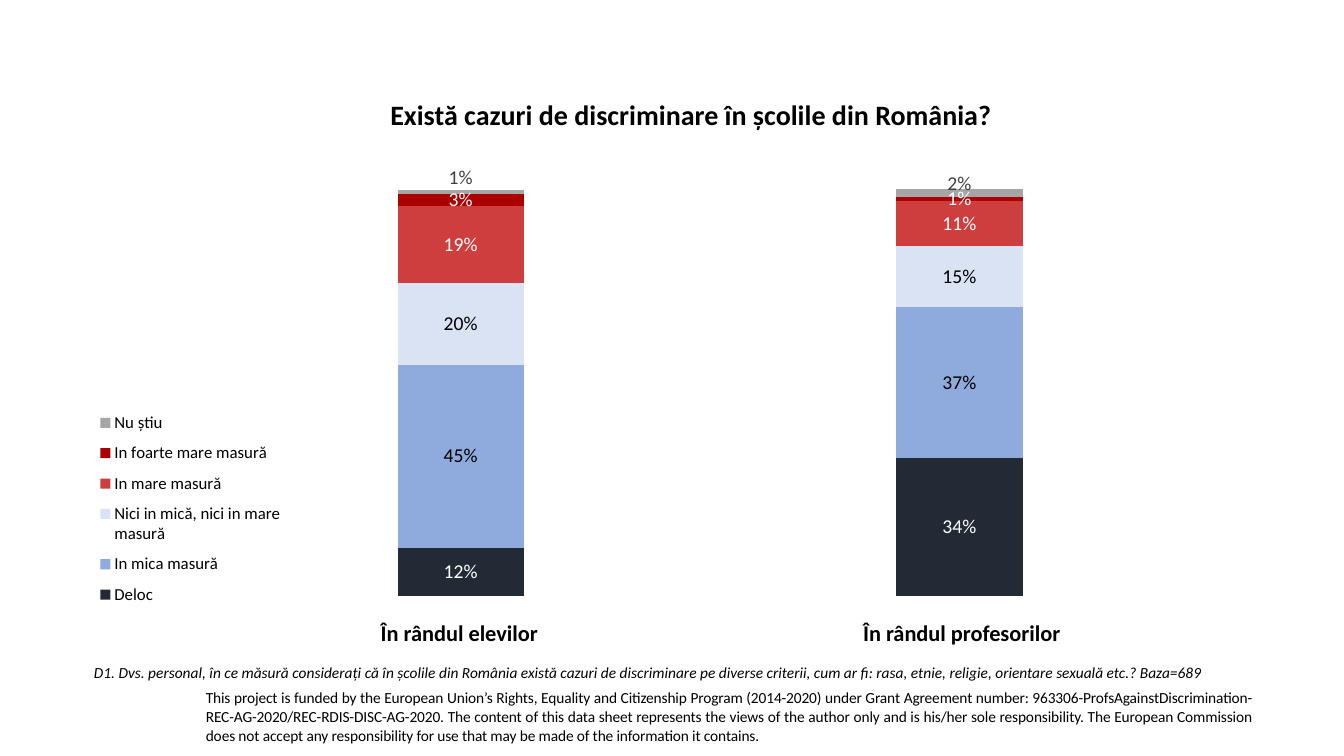
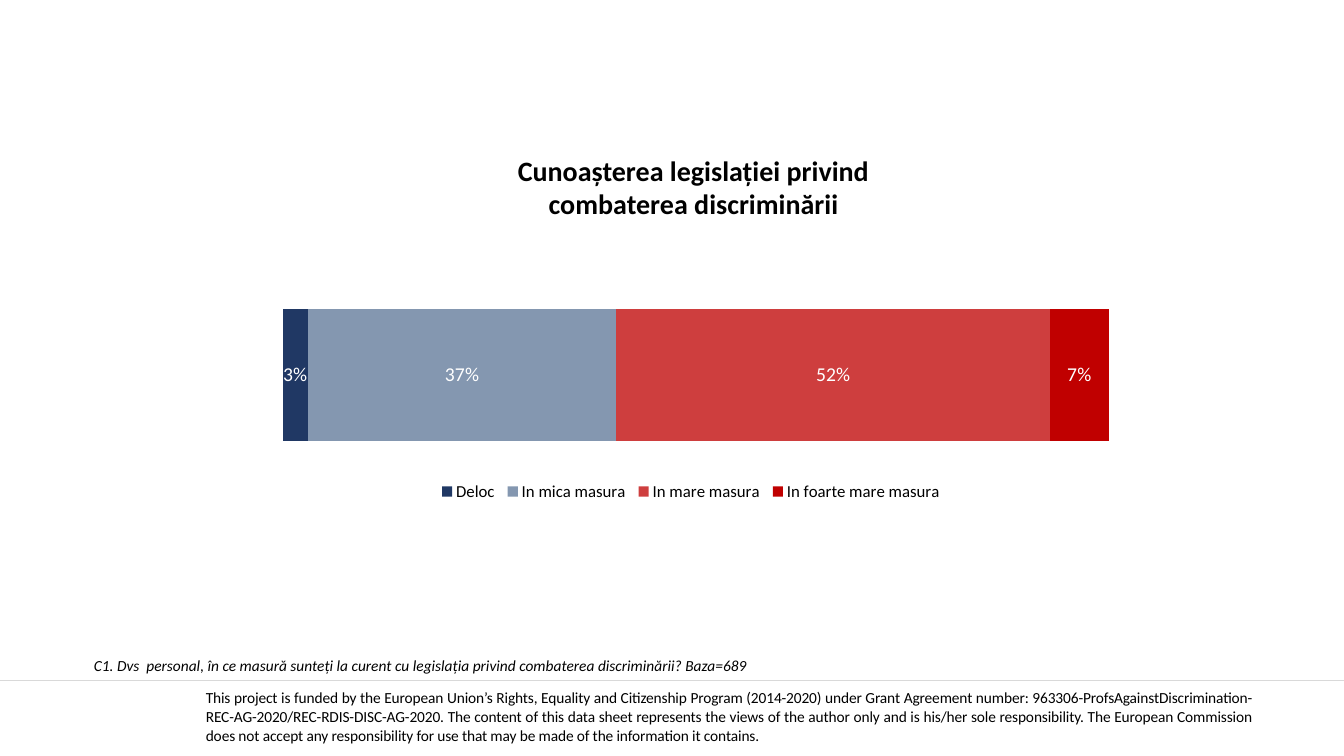
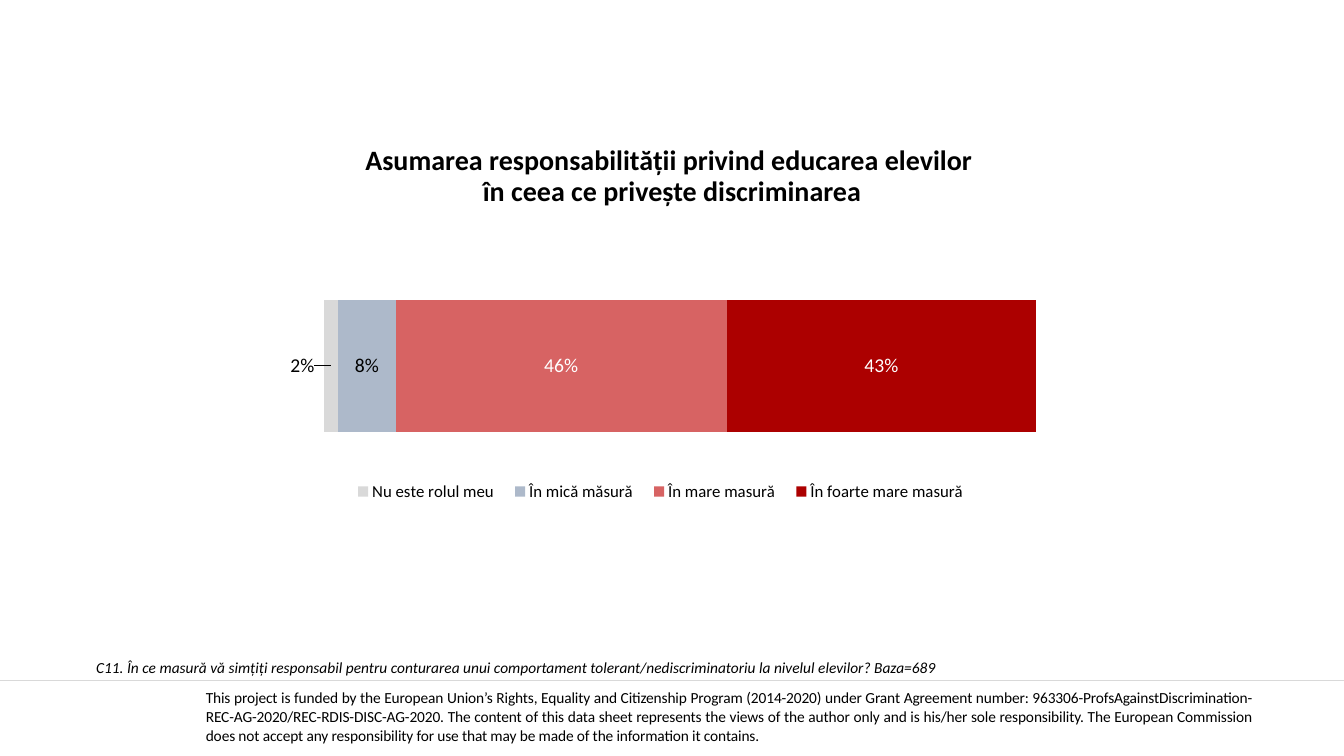
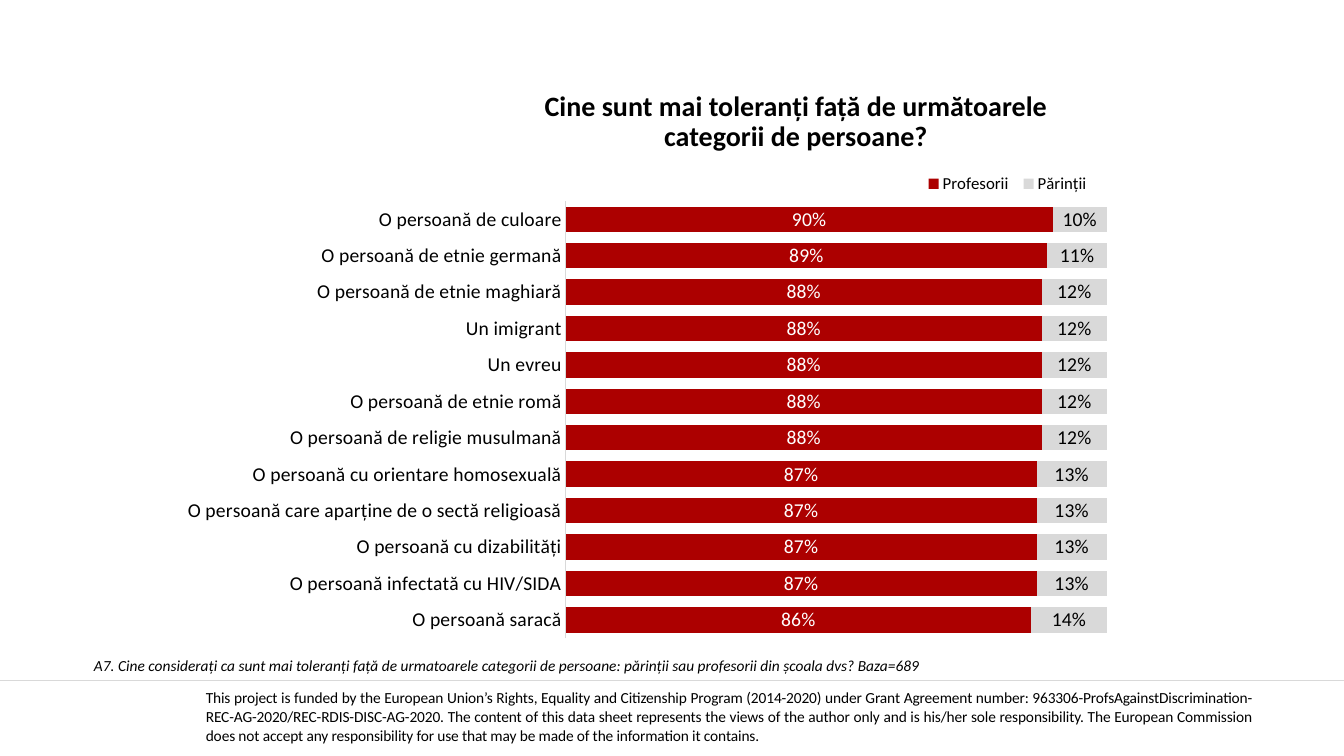
from lxml import etree
from pptx import Presentation
from pptx.chart.data import CategoryChartData
from pptx.dml.color import RGBColor
from pptx.enum.chart import (XL_CHART_TYPE, XL_LABEL_POSITION,
                             XL_LEGEND_POSITION, XL_TICK_MARK)
from pptx.enum.shapes import MSO_CONNECTOR
from pptx.enum.text import MSO_ANCHOR, PP_ALIGN
from pptx.oxml.ns import qn
from pptx.util import Emu, Pt

# Enum members
COLUMN = XL_CHART_TYPE.COLUMN_STACKED_100
BAR = XL_CHART_TYPE.BAR_STACKED
BAR_FULL = XL_CHART_TYPE.BAR_STACKED_100
CENTER, LEFT, JUSTIFY = PP_ALIGN.CENTER, PP_ALIGN.LEFT, PP_ALIGN.JUSTIFY
TOP, MIDDLE = MSO_ANCHOR.TOP, MSO_ANCHOR.MIDDLE
LEGEND_SIDE = {"left": XL_LEGEND_POSITION.LEFT,
               "bottom": XL_LEGEND_POSITION.BOTTOM,
               "top": XL_LEGEND_POSITION.TOP}

# Shared look
SCALE = 9525
WIDTH, HEIGHT = 1280, 720
BLACK, WHITE, DARK, GREY = "000000", "FFFFFF", "404040", "D9D9D9"
RED, CORAL = "AC0000", "CE3E3E"
PERCENT = "###0%"
PLAIN_TABLE = "{2D5ABB26-0587-4C30-8999-92F81FD0307C}"

TITLE = {"size": 20, "bold": True}
GROUP = {"size": 16, "bold": True}
NOTE = {"size": 11, "italic": True}
SMALL = {"size": 11}

FUNDING = (
    "This project is funded by the European Union’s Rights, Equality and "
    "Citizenship Program (2014-2020) under Grant Agreement number: "
    "963306-ProfsAgainstDiscrimination-REC-AG-2020/REC-RDIS-DISC-AG-2020. "
    "The content of this data sheet represents the views of the author only "
    "and is his/her sole responsibility. The European Commission does not "
    "accept any responsibility for use that may be made of the information "
    "it contains.")

# Series rows: name, bar colour, label colour
EXTENT = [("Deloc", "222A35", WHITE),
          ("In mica masură", "8FAADC", BLACK),
          ("Nici in mică, nici in mare masură", "DAE3F3", BLACK),
          ("In mare masură", CORAL, WHITE),
          ("In foarte mare masură", RED, WHITE),
          ("Nu știu", "A6A6A6", DARK)]
PUPILS = [0.12, 0.45, 0.2, 0.19, 0.03, 0.01]
STAFF = [0.34, 0.37, 0.15, 0.11, 0.01, 0.02]

LAW = [("Deloc", "203864", WHITE),
       ("In mica masura", "8497B0", WHITE),
       ("In mare masura", CORAL, WHITE),
       ("In foarte mare masura", "C00000", WHITE)]
LAW_VALS = [0.03, 0.37, 0.52, 0.07]

DUTY = [("Nu este rolul meu", GREY, BLACK),
        ("În mică măsură", "ADB9CA", BLACK),
        ("În mare masură", "D76363", WHITE),
        ("În foarte mare masură", RED, WHITE)]
DUTY_VALS = [0.02, 0.08, 0.46, 0.43]

SIDES = [("Profesorii", RED, WHITE), ("Părinții", GREY, BLACK)]
PEOPLE = {"O persoană de culoare": 90,
          "O persoană de etnie germană": 89,
          "O persoană de etnie maghiară": 88,
          "Un imigrant": 88,
          "Un evreu": 88,
          "O persoană de etnie romă": 88,
          "O persoană de religie musulmană": 88,
          "O persoană cu orientare homosexuală": 87,
          "O persoană care aparține de o sectă religioasă": 87,
          "O persoană cu dizabilități": 87,
          "O persoană infectată cu HIV/SIDA": 87,
          "O persoană saracă": 86}


def px(*vals):
    return [Emu(val * SCALE) for val in vals]


def color(code):
    return RGBColor.from_string(code)


def style(font, look):
    """Apply a dict of format values to a font."""
    look = {"name": "Calibri", "color": BLACK, **look}
    for key, val in look.items():
        if key == "color":
            font.color.rgb = color(val)
        else:
            setattr(font, key, Pt(val) if key == "size" else val)


def text(slide, box, lines, look, align=LEFT, anchor=TOP, space=1.0,
         wrap=True):
    frame = slide.shapes.add_textbox(*px(*box)).text_frame
    frame.word_wrap, frame.vertical_anchor = wrap, anchor
    for num, line in enumerate(lines):
        para = frame.add_paragraph() if num else frame.paragraphs[0]
        para.alignment, para.line_spacing = align, space
        run = para.add_run()
        run.text = line
        style(run.font, look)


def title(slide, box, *lines, space=0.9):
    text(slide, box, lines, TITLE, CENTER, MIDDLE, space)


def note(slide, left, top, width, line):
    text(slide, (left, top, width, 28), [line], NOTE)


def footer(slide):
    """Funding notice in a plain one-cell table."""
    table = slide.shapes.add_table(1, 1, *px(196, 633, 997, 100)).table
    table.first_row = table.horz_banding = False
    table._tbl.tblPr.find(qn("a:tableStyleId")).text = PLAIN_TABLE
    cell = table.cell(0, 0)
    cell.fill.background()
    cell.vertical_anchor = MIDDLE
    for side in ("left", "right", "top", "bottom"):
        setattr(cell, "margin_" + side, 0)
    para = cell.text_frame.paragraphs[0]
    para.alignment = JUSTIFY
    run = para.add_run()
    run.text = FUNDING
    style(run.font, SMALL)
    run._r.get_or_add_rPr().set("spc", "-10")


def rule(slide):
    line = slide.shapes.add_connector(MSO_CONNECTOR.STRAIGHT,
                                      *px(0, 648, WIDTH, 648))
    line.line.color.rgb = color(GREY)
    line.line.width = Pt(0.5)
    etree.SubElement(line._element.spPr, qn("a:effectLst"))


def layout(parent, pos, vals):
    """Put a manual layout into a chart part."""
    for old in parent.findall(qn("c:layout")):
        parent.remove(old)
    node = etree.Element(qn("c:layout"))
    manual = etree.SubElement(node, qn("c:manualLayout"))
    for key, val in vals.items():
        etree.SubElement(manual, qn("c:" + key)).set("val", str(val))
    parent.insert(pos, node)


def edges(x, y, w, h):
    return {"xMode": "edge", "yMode": "edge", "x": x, "y": y, "w": w, "h": h}


def shift(series, look, move):
    """Move the label of the first point by parts of the chart size."""
    label = series.points[0].data_label
    style(label.font, look)
    label.position = XL_LABEL_POSITION.CENTER
    node = label._dLbl
    layout(node, 1, {"x": move[0], "y": move[1]})
    form = etree.Element(qn("c:numFmt"))
    form.set("formatCode", PERCENT)
    form.set("sourceLinked", "0")
    node.insert(2, form)


def chart(slide, kind, box, rows, vals, plot, cats=("1",), gap=150,
          legend=None, moves=None):
    """Stacked chart; vals has one list per series, moves shifts labels."""
    data = CategoryChartData(number_format=PERCENT)
    data.categories = cats
    for (name, _, _), nums in zip(rows, vals):
        data.add_series(name, nums)
    graph = slide.shapes.add_chart(kind, *px(*box), data).chart
    graph.has_title = False
    style(graph.font, {"size": 10})

    # Axes and plot
    for axis in (graph.category_axis, graph.value_axis):
        axis.has_major_gridlines = False
        axis.visible = False
    graph.value_axis.minimum_scale = 0
    bars = graph.plots[0]
    bars.gap_width, bars.overlap, bars.vary_by_categories = gap, 100, False
    area = graph.element.find(".//" + qn("c:plotArea"))
    layout(area, 0, {"layoutTarget": "inner", **edges(*plot)})

    # Series and labels
    for num, (series, (_, fill, ink)) in enumerate(zip(bars.series, rows)):
        series.format.fill.solid()
        series.format.fill.fore_color.rgb = color(fill)
        look = {"size": 14, "color": ink}
        labels = series.data_labels
        labels.show_value = True
        labels.number_format = PERCENT
        labels.number_format_is_linked = False
        labels.position = XL_LABEL_POSITION.CENTER
        style(labels.font, look)
        if moves and num in moves:
            shift(series, look, moves[num])

    # Legend
    graph.has_legend = legend is not None
    if legend:
        side, place = legend
        key = graph.legend
        key.position = LEGEND_SIDE[side]
        key.include_in_layout = False
        style(key.font, {"size": 12})
        layout(key._element, 1, edges(*place))
    return graph


def single(vals):
    return [[val] for val in vals]


def cases(slide):
    note(slide, 80, 627, 1104,
         "D1. Dvs. personal, în ce măsură considerați că în școlile din "
         "România există cazuri de discriminare pe diverse criterii, cum ar "
         "fi: rasa, etnie, religie, orientare sexuală etc.? Baza=689")
    title(slide, (312, 80, 692, 61),
          "Există cazuri de discriminare în școlile din România?")
    plain = [(f"Series {num}", *row[1:]) for num, row in enumerate(EXTENT, 1)]
    key = ("left", (0.01, 0.51, 0.33, 0.46))
    groups = [(80, EXTENT, PUPILS, key, -0.03, (352, 171),
               "În rândul elevilor"),
              (555, plain, STAFF, None, -0.02, (811, 210),
               "În rândul profesorilor")]
    for left, rows, vals, legend, lift, (start, width), name in groups:
        chart(slide, COLUMN, (left, 158, 579, 441), rows, single(vals),
              (0.36, 0.05, 0.52, 0.88), legend=legend, moves={5: (0, lift)})
        text(slide, (start, 585, width, 36), [name], GROUP, CENTER,
             wrap=False)


def law(slide):
    chart(slide, BAR_FULL, (188, 118, 904, 435), LAW, single(LAW_VALS),
          (0.09, 0.19, 0.87, 0.72),
          legend=("bottom", (0.25, 0.77, 0.54, 0.07)))
    title(slide, (445, 141, 431, 74),
          "Cunoașterea legislației privind combaterea discriminării",
          space=1.0)
    note(slide, 80, 620, 1157,
         "C1. Dvs  personal, în ce masură sunteți la curent cu legislația "
         "privind combaterea discriminării? Baza=689")


def duty(slide):
    note(slide, 82, 622, 1193,
         "C11. În ce masură vă simțiți responsabil pentru conturarea unui "
         "comportament tolerant/nediscriminatoriu la nivelul elevilor? "
         "Baza=689")
    title(slide, (294, 128, 692, 81),
          "Asumarea responsabilității privind educarea elevilor ",
          "în ceea ce privește discriminarea")
    graph = chart(slide, BAR, (227, 118, 904, 435), DUTY, single(DUTY_VALS),
                  (0.09, 0.17, 0.91, 0.72),
                  legend=("bottom", (0.11, 0.77, 0.67, 0.07)),
                  moves={0: (-0.03, 0)})
    graph.value_axis.maximum_scale = 1.2


def people(slide):
    note(slide, 80, 620, 919,
         "A7. Cine considerați ca sunt mai toleranți față de urmatoarele "
         "categorii de persoane: părinții sau profesorii din școala dvs? "
         "Baza=689")
    vals = [[num / 100 for num in PEOPLE.values()],
            [(100 - num) / 100 for num in PEOPLE.values()]]
    graph = chart(slide, BAR_FULL, (118, 149, 1052, 473), SIDES, vals,
                  (0.4, 0.09, 0.49, 0.88), cats=list(PEOPLE), gap=43,
                  legend=("top", (0.72, 0.03, 0.16, 0.05)))
    axis = graph.category_axis
    axis.visible = axis.reverse_order = True
    axis.major_tick_mark = axis.minor_tick_mark = XL_TICK_MARK.NONE
    axis.format.line.color.rgb = color(GREY)
    axis.format.line.width = Pt(0.75)
    style(axis.tick_labels.font, {"size": 14})
    title(slide, (499, 86, 518, 61),
          "Cine sunt mai toleranți față de următoarele categorii de "
          "persoane?")


def main():
    deck = Presentation()
    deck.slide_width, deck.slide_height = px(WIDTH, HEIGHT)
    for fill in (cases, law, duty, people):
        slide = deck.slides.add_slide(deck.slide_layouts[6])
        footer(slide)
        if fill is not cases:
            rule(slide)
        fill(slide)
    deck.save("out.pptx")


if __name__ == "__main__":
    main()
